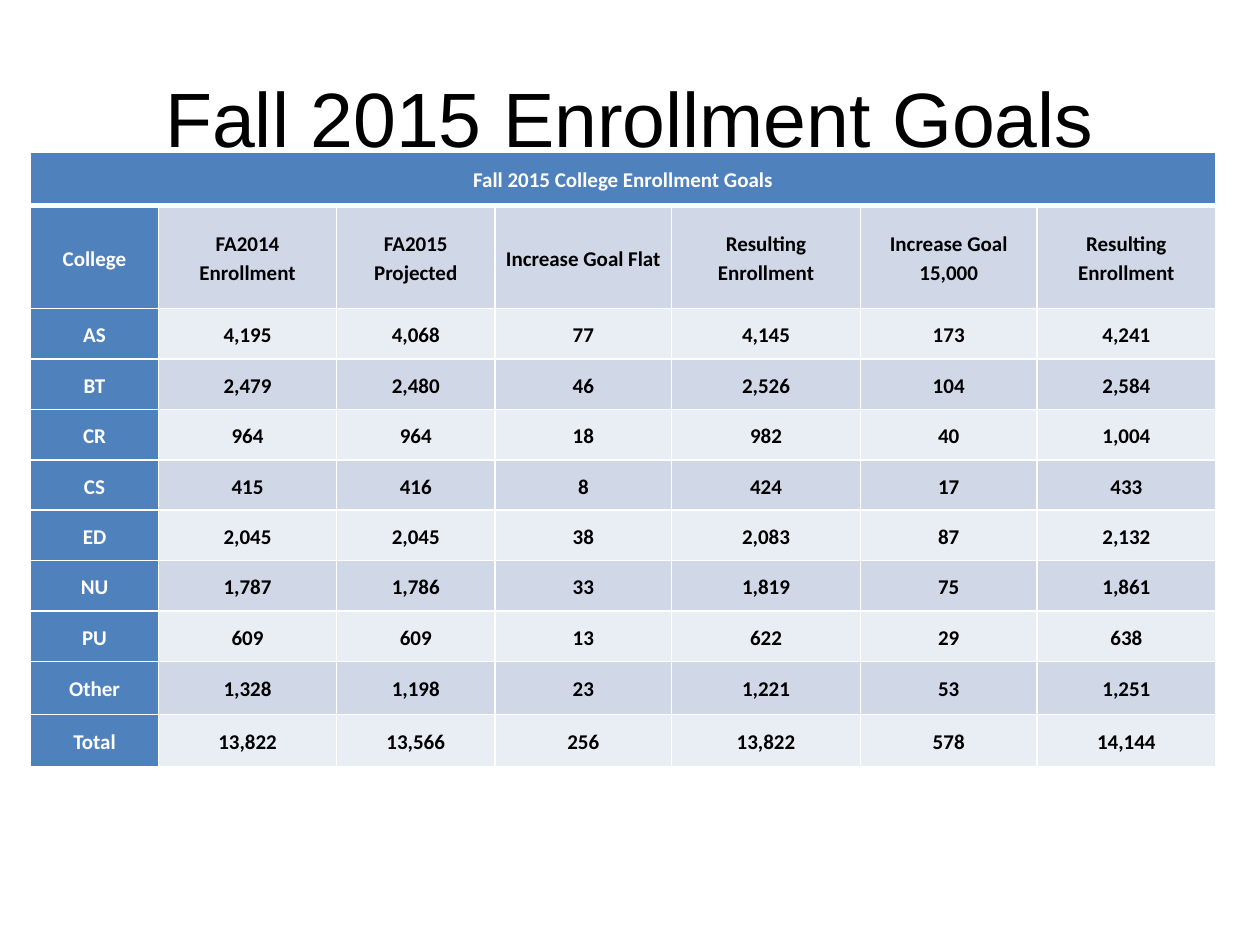
"""Build the Fall 2015 enrollment goals slide with its table by college."""
import dataclasses

import lxml.etree
import pptx
import pptx.dml.color
import pptx.enum.text
import pptx.oxml.ns
import pptx.util

Inches = pptx.util.Inches
Pt = pptx.util.Pt
RGBColor = pptx.dml.color.RGBColor
MIDDLE = pptx.enum.text.MSO_ANCHOR.MIDDLE
CENTER = pptx.enum.text.PP_ALIGN.CENTER


@dataclasses.dataclass(frozen=True)
class Theme:
    title_font: str = "Arial"
    table_font: str = "Calibri"
    title_size: int = 44
    table_size: int = 12
    ink: str = "000000"
    white: str = "FFFFFF"
    header: str = "4F81BD"
    bands: tuple = ("E9EDF4", "D0D8E8")
    rule: int = 1
    heavy_rule: int = 3


THEME = Theme()


def style_paragraph(paragraph, font_name, size, color, bold=False):
    paragraph.alignment = CENTER
    paragraph.font.name = font_name
    paragraph.font.size = Pt(size)
    paragraph.font.bold = bold
    paragraph.font.color.rgb = RGBColor.from_string(color)


def add_borders(cell, widths):
    properties = cell._tc.get_or_add_tcPr()
    for position, (side, width) in enumerate(widths.items()):
        line = lxml.etree.Element(pptx.oxml.ns.qn(f"a:ln{side}"), w=str(Pt(width)))
        fill = lxml.etree.SubElement(line, pptx.oxml.ns.qn("a:solidFill"))
        lxml.etree.SubElement(fill, pptx.oxml.ns.qn("a:srgbClr"), val=THEME.white)
        properties.insert(position, line)


COLUMN_WIDTHS = [1.02, 1.41, 1.26, 1.4, 1.5, 1.4, 1.42]
ROW_HEIGHTS = [0.42, 0.82] + [0.4] * 7 + [0.42] * 2
ENROLLMENT = [
    ["Fall 2015 College Enrollment Goals"] + [""] * 6,
    ["College", "FA2014 Enrollment", "FA2015 Projected", "Increase Goal Flat",
     "Resulting Enrollment", "Increase Goal 15,000", "Resulting Enrollment"],
    ["AS", "4,195", "4,068", "77", "4,145", "173", "4,241"],
    ["BT", "2,479", "2,480", "46", "2,526", "104", "2,584"],
    ["CR", "964", "964", "18", "982", "40", "1,004"],
    ["CS", "415", "416", "8", "424", "17", "433"],
    ["ED", "2,045", "2,045", "38", "2,083", "87", "2,132"],
    ["NU", "1,787", "1,786", "33", "1,819", "75", "1,861"],
    ["PU", "609", "609", "13", "622", "29", "638"],
    ["Other", "1,328", "1,198", "23", "1,221", "53", "1,251"],
    ["Total", "13,822", "13,566", "256", "13,822", "578", "14,144"],
]

presentation = pptx.Presentation()
presentation.slide_width = Inches(10)
presentation.slide_height = Inches(7.5)
slide = presentation.slides.add_slide(presentation.slide_layouts[6])

title = slide.shapes.add_textbox(Inches(0.5), Inches(0.3), Inches(9), Inches(1.25)).text_frame
title.word_wrap = True
title.vertical_anchor = MIDDLE
title.text = "Fall 2015 Enrollment Goals"
style_paragraph(title.paragraphs[0], THEME.title_font, THEME.title_size, THEME.ink)

goals = slide.shapes.add_table(
    len(ROW_HEIGHTS), len(COLUMN_WIDTHS), Inches(0.24), Inches(1.21),
    Inches(sum(COLUMN_WIDTHS)), Inches(sum(ROW_HEIGHTS))).table
goals.first_col = True
for column, width in zip(goals.columns, COLUMN_WIDTHS):
    column.width = Inches(width)
for row, height in zip(goals.rows, ROW_HEIGHTS):
    row.height = Inches(height)
goals.cell(0, 0).merge(goals.cell(0, len(COLUMN_WIDTHS) - 1))

for row_index, values in enumerate(ENROLLMENT):
    for column_index, value in enumerate(values):
        cell = goals.cell(row_index, column_index)
        is_header = row_index == 0 or column_index == 0
        cell.fill.solid()
        cell.fill.fore_color.rgb = RGBColor.from_string(
            THEME.header if is_header else THEME.bands[row_index % 2])
        add_borders(cell, {
            "L": THEME.rule,
            "R": THEME.rule,
            "T": THEME.heavy_rule if row_index == 1 else THEME.rule,
            "B": THEME.heavy_rule if row_index == 0 else THEME.rule,
        })
        cell.vertical_anchor = MIDDLE
        cell.margin_left = cell.margin_right = Inches(0.07)
        cell.margin_top = cell.margin_bottom = 0
        if value:
            cell.text = value
            paragraph = cell.text_frame.paragraphs[0]
            paragraph.line_spacing = 1.15
            style_paragraph(paragraph, THEME.table_font, THEME.table_size,
                            THEME.white if is_header else THEME.ink, bold=True)

presentation.save("out.pptx")
